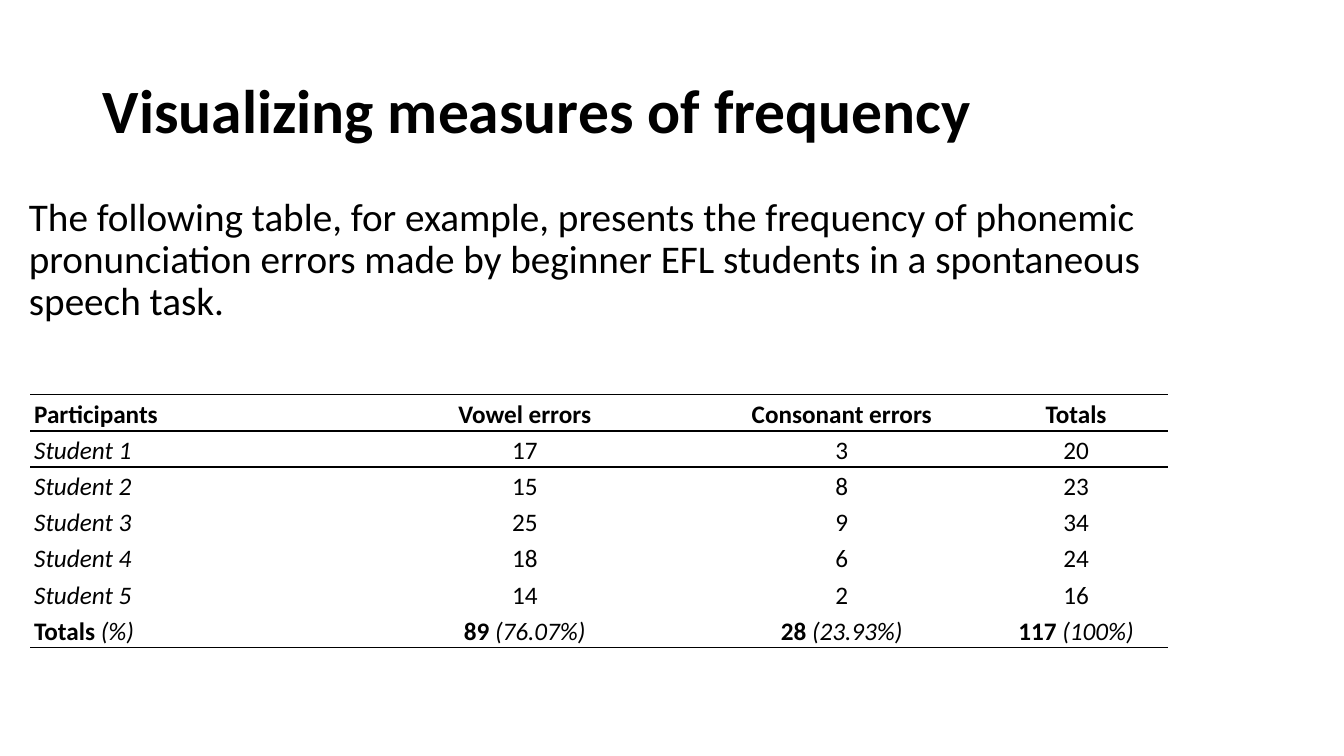
from lxml import etree
from pptx import Presentation
from pptx import util as u
from pptx.dml.color import RGBColor
from pptx.enum import text
from pptx.oxml import ns

TITLE = "Visualizing measures of frequency"
INTRO = ("The following table, for example, presents the frequency of phonemic "
         "pronunciation errors made by beginner EFL students in a spontaneous speech task.")
HEADER = ("Participants", "", "Vowel errors", "Consonant errors", "Totals")
STUDENTS = [
    ("Student 1", "", "17", "3", "20"),
    ("Student 2", "", "15", "8", "23"),
    ("Student 3", "", "25", "9", "34"),
    ("Student 4", "", "18", "6", "24"),
    ("Student 5", "", "14", "2", "16"),
]
TOTALS = (("Totals ", "(%)"), (), ("89 ", "(76.07%)"), ("28 ", "(23.93%)"), ("117 ", "(100%)"))
COLORS = {"ink": "000000"}
FONT = "Calibri"
COLUMN_WIDTHS = (7.77, 0.25, 8.79, 7.19, 4.62)
ROW_HEIGHT = 0.91
NO_GRID_STYLE = "{2D5ABB26-0587-4C30-8999-92F81FD0307C}"


def add_run(p, content, size, bold=False, italic=False):
    """Append a formatted run to a paragraph."""
    r = p.add_run()
    r.text = content
    r.font.name, r.font.size = FONT, u.Pt(size)
    r.font.bold, r.font.italic = bold, italic
    r.font.color.rgb = RGBColor.from_string(COLORS["ink"])


def add_text(s, content, box, size, bold=False):
    """Add a wrapped, vertically centred text box."""
    tf = s.shapes.add_textbox(*(u.Cm(v) for v in box)).text_frame
    tf.word_wrap = True
    tf.vertical_anchor = text.MSO_ANCHOR.MIDDLE
    p = tf.paragraphs[0]
    p.line_spacing = 0.9
    add_run(p, content, size, bold)


def add_rule(cell, side):
    """Draw a thin rule along one side of a cell."""
    tc_pr = cell._tc.get_or_add_tcPr()
    ln = etree.SubElement(tc_pr, ns.qn(f"a:{side}"), w=str(u.Pt(1)))
    fill = etree.SubElement(ln, ns.qn("a:solidFill"))
    etree.SubElement(fill, ns.qn("a:srgbClr"), val=COLORS["ink"])


def cell_runs(row, col, last):
    """Return the (text, bold, italic) runs of a table cell."""
    if row == last:
        return [(t, i == 0, i == 1) for i, t in enumerate(TOTALS[col])]
    content = HEADER[col] if row == 0 else STUDENTS[row - 1][col]
    return [(content, row == 0, row > 0 and col == 0)] if content else []


def add_error_table(s):
    """Add the table of error counts."""
    last = len(STUDENTS) + 1
    rules = {0: ("lnT", "lnB"), 1: ("lnT",), last: ("lnB",)}
    table = s.shapes.add_table(
        last + 1, len(HEADER), u.Cm(0.76), u.Cm(9.95),
        u.Cm(sum(COLUMN_WIDTHS)), u.Cm(ROW_HEIGHT * (last + 1))).table
    table.first_row = table.horz_banding = False
    table._tbl.tblPr.find(ns.qn("a:tableStyleId")).text = NO_GRID_STYLE
    for column, width in zip(table.columns, COLUMN_WIDTHS):
        column.width = u.Cm(width)
    for i, row in enumerate(table.rows):
        row.height = u.Cm(ROW_HEIGHT)
        for j, cell in enumerate(row.cells):
            cell.margin_left = cell.margin_right = u.Cm(0.1)
            cell.margin_top = cell.margin_bottom = 0
            for side in rules.get(i, ()):
                add_rule(cell, side)
            cell.fill.background()
            p = cell.text_frame.paragraphs[0]
            p.line_spacing = 1.15
            p.alignment = text.PP_ALIGN.CENTER if j else text.PP_ALIGN.LEFT
            for content, bold, italic in cell_runs(i, j, last):
                add_run(p, content, 18, bold, italic)


def main():
    """Build the slide and save it."""
    prs = Presentation()
    prs.slide_width, prs.slide_height = u.Cm(33.87), u.Cm(19.05)
    s = prs.slides.add_slide(prs.slide_layouts[6])
    add_text(s, INTRO, (0.48, 3.61, 29.21, 5.92), 28)
    add_error_table(s)
    add_text(s, TITLE, (2.34, 1.02, 29.21, 3.68), 44, bold=True)
    prs.save("out.pptx")


if __name__ == "__main__":
    main()
